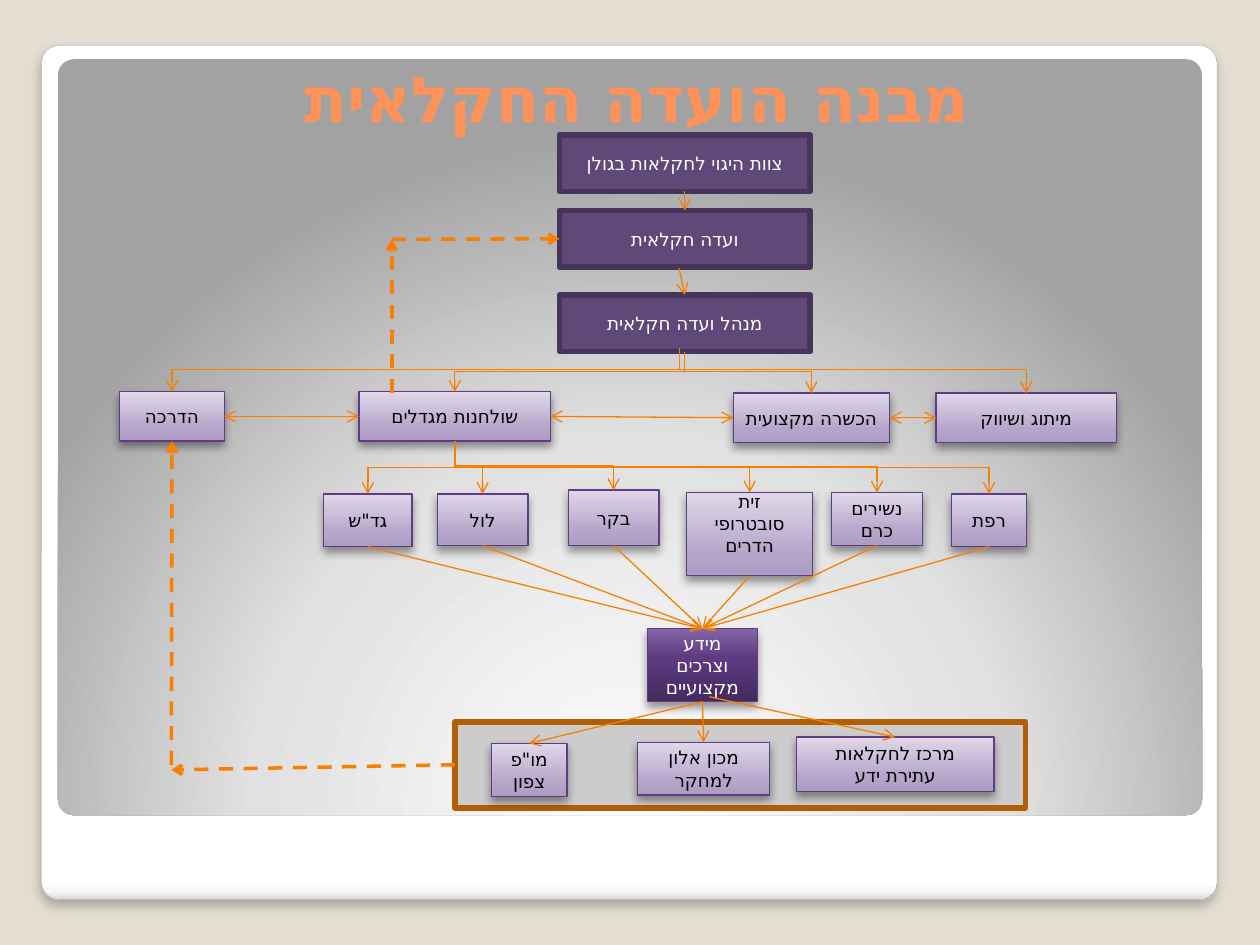
"""Build the slide that charts the structure of the agricultural committee."""
from dataclasses import dataclass

from lxml import etree
from pptx import Presentation
from pptx.dml.color import RGBColor
from pptx.enum.dml import MSO_LINE
from pptx.enum.shapes import MSO_CONNECTOR, MSO_SHAPE
from pptx.enum.text import MSO_ANCHOR, PP_ALIGN
from pptx.oxml.ns import qn
from pptx.util import Inches, Pt

RECT, ROUND = MSO_SHAPE.RECTANGLE, MSO_SHAPE.ROUNDED_RECTANGLE
LINE, ELBOW = MSO_CONNECTOR.STRAIGHT, MSO_CONNECTOR.ELBOW
DASH = MSO_LINE.DASH
CENTER, MIDDLE, BOTTOM = PP_ALIGN.CENTER, MSO_ANCHOR.MIDDLE, MSO_ANCHOR.BOTTOM
FONT = "DejaVu Sans"
COLORS = {
    "back": "E3DED1", "title": "FF9258", "arrow": "F97F00", "edge": "603C84",
    "solid": "604878", "border": "473559", "frame": "CCCCCC", "rim": "B25E07",
    "white": "FFFFFF", "black": "000000", "card": "A4A4A4",
}
LIGHT = [(0, "AD9CC3"), (25, "B5A5CA"), (100, "DFD7E9")]
DARK = [(0, "442A5E"), (60, "5E3B81"), (100, "8364A8")]
CARD = [(0, "FFFFFF"), (98, "FFFFFF"), (99, "F7F7F7"), (100, "DADADA")]
GLOW = [(0, "FFFFFF"), (55, "E1E1E1"), (100, "A2A2A2")]


@dataclass(frozen=True)
class Box:
    """A rectangle in inches with its label and look."""
    x: float
    y: float
    w: float
    h: float
    text: str = ""
    look: str = "light"
    low: float = 0.05

    @property
    def top(self) -> tuple:
        return self.x + self.w / 2, self.y

    @property
    def foot(self) -> tuple:
        return self.x + self.w / 2, self.y + self.h

    @property
    def left(self) -> tuple:
        return self.x, self.y + self.h / 2

    @property
    def right(self) -> tuple:
        return self.x + self.w, self.y + self.h / 2


FRAME = Box(3.61, 5.73, 4.53, 0.68, look="frame")
TEAM, BOARD, HEAD = (
    Box(4.44, y, 1.99, 0.45, text, "solid") for y, text in (
        (1.07, "צוות היגוי לחקלאות בגולן"),
        (1.67, "ועדה חקלאית"),
        (2.34, "מנהל ועדה חקלאית")))
GUIDE = Box(0.95, 3.11, 0.83, 0.39, "הדרכה")
TABLES = Box(2.85, 3.11, 1.52, 0.39, "שולחנות מגדלים")
SKILL = Box(5.82, 3.12, 1.24, 0.39, "הכשרה מקצועית")
BRAND = Box(7.43, 3.12, 1.43, 0.39, "מיתוג ושיווק")
CROPS = [
    Box(2.57, 3.92, 0.7, 0.42, 'גד"ש'),
    Box(3.47, 3.92, 0.72, 0.41, "לול"),
    Box(4.51, 3.89, 0.72, 0.44, "בקר"),
    Box(5.45, 3.91, 1, 0.66, "זית\nסובטרופי\nהדרים", low=0.22),
    Box(6.6, 3.91, 0.72, 0.42, "נשירים\nכרם"),
    Box(7.55, 3.92, 0.6, 0.42, "רפת"),
]
NEEDS = Box(5.14, 4.99, 0.87, 0.58, "מידע וצרכים מקצועיים", "dark")
NORTH = Box(3.9, 5.9, 0.6, 0.42, 'מו"פ צפון')
LAB = Box(5.06, 5.89, 1.05, 0.42, "מכון אלון למחקר")
HUB = Box(6.32, 5.85, 1.57, 0.43, "מרכז לחקלאות עתירת ידע")
BOXES = [FRAME, TEAM, BOARD, HEAD, GUIDE, TABLES, SKILL, BRAND, *CROPS,
         NEEDS, NORTH, LAB, HUB]


def rgb(name: str) -> RGBColor:
    return RGBColor.from_string(COLORS[name])


def node(parent, tag: str, **attrs):
    return etree.SubElement(parent, qn(f"a:{tag}"),
                            {key: str(val) for key, val in attrs.items()})


def write(shape, text: str, *, size: float = 10.5, color: str = "black",
          bold: bool = False, anchor=MIDDLE) -> None:
    frame = shape.text_frame
    frame.text = text
    frame.word_wrap = True
    frame.vertical_anchor = anchor
    for para in frame.paragraphs:
        para.alignment = CENTER
        para._p.get_or_add_pPr().set("rtl", "1")
        for run in para.runs:
            font = run.font
            font.name, font.size, font.bold = FONT, Pt(size), bold
            font.color.rgb = rgb(color)
            node(run._r.get_or_add_rPr(), "cs", typeface=FONT)


def blend(shape, stops: list, angle: int = 270, glow: bool = False) -> None:
    shape.fill.background()
    props = shape._element.spPr
    old = props.find(qn("a:noFill"))
    grad = etree.Element(qn("a:gradFill"), rotWithShape="1")
    row = node(grad, "gsLst")
    for pos, color in stops:
        node(node(row, "gs", pos=pos * 1000), "srgbClr", val=color)
    if glow:
        way = node(grad, "path", path="circle")
        node(way, "fillToRect", l=50000, t=175000, r=50000, b=-75000)
    else:
        node(grad, "lin", ang=angle * 60000, scaled=0)
    props.replace(old, grad)


def shade(shape, alpha: int, blur: float, dist: float) -> None:
    cast = node(shape._element.spPr.find(qn("a:effectLst")), "outerShdw",
                blurRad=Pt(blur), dist=Pt(dist), dir=5400000, rotWithShape=0)
    node(node(cast, "srgbClr", val=COLORS["black"]), "alpha", val=alpha * 1000)


def block(slide, kind, x: float, y: float, w: float, h: float):
    shape = slide.shapes.add_shape(kind, *map(Inches, (x, y, w, h)))
    shape.shadow.inherit = False
    return shape


def edge(shape, color: str, width: float) -> None:
    shape.line.color.rgb = rgb(color)
    shape.line.width = Pt(width)


def panels(slide) -> None:
    card = block(slide, ROUND, 0.33, 0.36, 9.33, 6.78)
    blend(card, CARD, 90)
    edge(card, "card", 0.16)
    shade(card, 25, 6, 4)
    glow = block(slide, ROUND, 0.46, 0.47, 9.08, 6)
    blend(glow, GLOW, glow=True)
    glow.line.fill.background()
    for shape in (card, glow):
        shape.adjustments[0] = 0.021


def draw(slide, box: Box) -> None:
    shape = block(slide, RECT, box.x, box.y, box.w, box.h)
    if box.look in ("solid", "frame"):
        shape.fill.solid()
        shape.fill.fore_color.rgb = rgb(box.look)
        edge(shape, "border" if box.look == "solid" else "rim", 3.35)
    else:
        blend(shape, LIGHT if box.look == "light" else DARK)
        edge(shape, "edge", 0.75)
        shade(shape, 40, 5.2, 3)
    if box.text:
        write(shape, box.text, color="black" if box.look == "light" else "white")
        shape.text_frame.margin_bottom = Inches(box.low)


def link(slide, start: tuple, end: tuple, *, kind=LINE, dash: bool = False,
         both: bool = False):
    wire = slide.shapes.add_connector(kind, *map(Inches, (*start, *end)))
    edge(wire, "arrow", 2 if dash else 0.75)
    if dash:
        wire.line.dash_style = DASH
    props = wire._element.spPr
    ends = props.find(qn("a:ln"))
    if both:
        node(ends, "headEnd", type="arrow")
    node(ends, "tailEnd", type="arrow")
    node(props, "effectLst")
    return wire


def drop(slide, start: tuple, end: tuple) -> None:
    (x1, y1), (x2, y2) = start, end
    midx, midy = (x1 + x2) / 2, (y1 + y2) / 2
    w, h = (y2 - y1) / 2, abs(x2 - x1) / 2
    wire = link(slide, (midx - w, midy - h), (midx + w, midy + h), kind=ELBOW)
    turn = wire._element.spPr.find(qn("a:xfrm"))
    turn.set("rot", str((270 if x2 > x1 else 90) * 60000))
    if x2 > x1:
        turn.set("flipH", "1")


def bend(slide, start: tuple, end: tuple) -> None:
    wire = link(slide, start, end, kind=ELBOW)
    wire._element.spPr.find(qn("a:prstGeom")).set("prst", "bentConnector2")


def main() -> None:
    deck = Presentation()
    deck.slide_width, deck.slide_height = Inches(10), Inches(7.5)
    slide = deck.slides.add_slide(deck.slide_layouts[5])
    slide.background.fill.solid()
    slide.background.fill.fore_color.rgb = rgb("back")
    panels(slide)
    title = slide.shapes.title
    title.left, title.top, title.width, title.height = map(
        Inches, (0.58, 0.21, 8.95, 0.91))
    write(title, "מבנה הועדה החקלאית", size=36, color="title", bold=True,
          anchor=BOTTOM)
    title._element.getparent().append(title._element)
    for box in BOXES:
        draw(slide, box)
    for crop in CROPS:
        drop(slide, TABLES.foot, crop.top)
        link(slide, crop.foot, NEEDS.top)
    drop(slide, HEAD.foot, TABLES.top)
    drop(slide, (5.39, 2.76), GUIDE.top)
    bend(slide, (5.4, 2.93), BRAND.top)
    bend(slide, (5.4, 2.95), SKILL.top)
    for start, end in ((TEAM.foot, BOARD.top), ((5.39, 2.13), HEAD.top),
                       (NEEDS.foot, LAB.top), (NEEDS.foot, NORTH.top),
                       ((5.63, 5.53), HUB.top)):
        link(slide, start, end)
    for near, far in ((GUIDE, TABLES), (TABLES, SKILL), (SKILL, BRAND)):
        link(slide, near.right, far.left, both=True)
    for start, end in ((FRAME.left, (1.36, 6.11)), ((1.36, 6.07), GUIDE.foot),
                       ((3.11, 3.12), (3.11, 1.9)), ((3.11, 1.9), BOARD.left)):
        link(slide, start, end, dash=True)
    deck.save("out.pptx")


if __name__ == "__main__":
    main()
